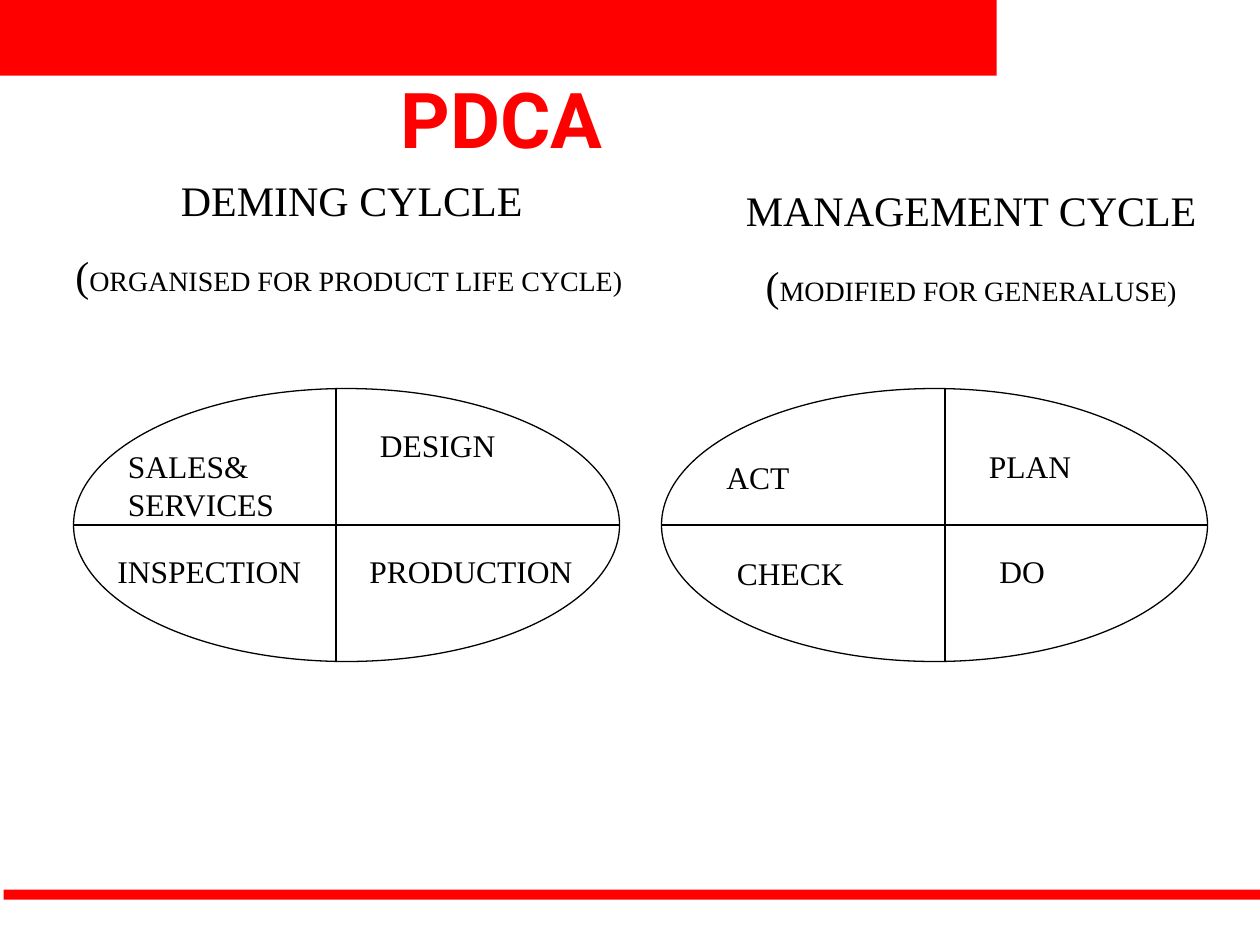
"""Build the PDCA slide comparing the Deming cycle with the management cycle."""
import pptx
import pptx.dml.color
import pptx.enum.shapes
import pptx.enum.text
import pptx.oxml
import pptx.util

RED = pptx.dml.color.RGBColor(0xFF, 0x00, 0x00)
BLACK = pptx.dml.color.RGBColor(0x00, 0x00, 0x00)
SHAPE = pptx.enum.shapes.MSO_SHAPE
ALIGN = pptx.enum.text.PP_ALIGN
SERIF = "Times New Roman"
UNIT = 1 / 12
CYCLE_TOP, CYCLE_WIDTH, CYCLE_HEIGHT = 37, 52, 26

CYCLES = [
    (7, 32, (6, 16), "DEMING CYLCLE", "ORGANISED FOR PRODUCT LIFE CYCLE)", ALIGN.LEFT,
     [("DESIGN", 35, 40, 16, 4.8), ("PRODUCTION", 34, 52, 22, 4.8),
      ("INSPECTION", 10, 52, 22, 4.8), ("SALES& SERVICES", 11, 42, 22, 8.4)]),
    (63, 90, (65, 17), "MANAGEMENT CYCLE", "MODIFIED FOR GENERALUSE)", ALIGN.CENTER,
     [("PLAN", 93, 42, 22, 4.8), ("DO", 94, 52, 22, 4.8),
      ("CHECK", 69, 52.2, 22, 4.8), ("ACT", 68, 43, 22, 4.8)]),
]


def grid(*units):
    return [pptx.util.Inches(u * UNIT) for u in units]


def style_run(r, size, font=SERIF, color=BLACK, bold=False):
    r.font.size = pptx.util.Pt(size)
    r.font.name = font
    r.font.color.rgb = color
    r.font.bold = bold


def add_text(s, box, text, size, **style):
    tf = s.shapes.add_textbox(*grid(*box)).text_frame
    tf.word_wrap = True
    tf.auto_size = pptx.enum.text.MSO_AUTO_SIZE.SHAPE_TO_FIT_TEXT
    tf.text = text
    style_run(tf.paragraphs[0].runs[0], size, **style)
    return tf


def add_bar(s, left, top, width, height):
    sp = s.shapes.add_shape(SHAPE.RECTANGLE, *map(pptx.util.Inches, (left, top, width, height)))
    sp.shadow.inherit = False
    sp.fill.solid()
    sp.fill.fore_color.rgb = RED
    sp.line.fill.background()


def set_outline(sp):
    sp.line.color.rgb = BLACK
    sp.line.width = pptx.util.Pt(0.75)


def add_line(s, x1, y1, x2, y2):
    line = s.shapes.add_connector(pptx.enum.shapes.MSO_CONNECTOR.STRAIGHT, *grid(x1, y1, x2, y2))
    set_outline(line)
    line._element.spPr.append(pptx.oxml.parse_xml(
        '<a:effectLst xmlns:a="http://schemas.openxmlformats.org/drawingml/2006/main"/>'))


def add_wheel(s, left, split):
    sp = s.shapes.add_shape(SHAPE.OVAL, *grid(left, CYCLE_TOP, CYCLE_WIDTH, CYCLE_HEIGHT))
    sp.shadow.inherit = False
    sp.fill.background()
    set_outline(sp)
    middle = CYCLE_TOP + CYCLE_HEIGHT / 2
    add_line(s, split, CYCLE_TOP, split, CYCLE_TOP + CYCLE_HEIGHT)
    add_line(s, left, middle, left + CYCLE_WIDTH, middle)


def add_heading(s, place, title, note, note_align):
    tf = add_text(s, (*place, 55, 13.2), title, 24)
    tf.paragraphs[0].alignment = ALIGN.CENTER
    p = tf.add_paragraph()
    p.alignment = note_align
    p.space_before = pptx.util.Pt(14)
    for text, size in (("(", 24), (note, 16)):
        r = p.add_run()
        r.text = text
        style_run(r, size)


def main():
    prs = pptx.Presentation()
    prs.slide_width, prs.slide_height = grid(120, 90)
    s = prs.slides.add_slide(prs.slide_layouts[6])
    add_bar(s, 0, 0, 7.91, 0.6)
    add_bar(s, 0.03, 7.06, 10, 0.08)
    add_text(s, (37, 6.2, 42.7, 10), "PDCA", 44, font="Roboto", color=RED, bold=True)
    for left, split, place, title, note, note_align, labels in CYCLES:
        add_wheel(s, left, split)
        add_heading(s, place, title, note, note_align)
        for text, *box in labels:
            add_text(s, box, text, 18)
    prs.save("out.pptx")


if __name__ == "__main__":
    main()
